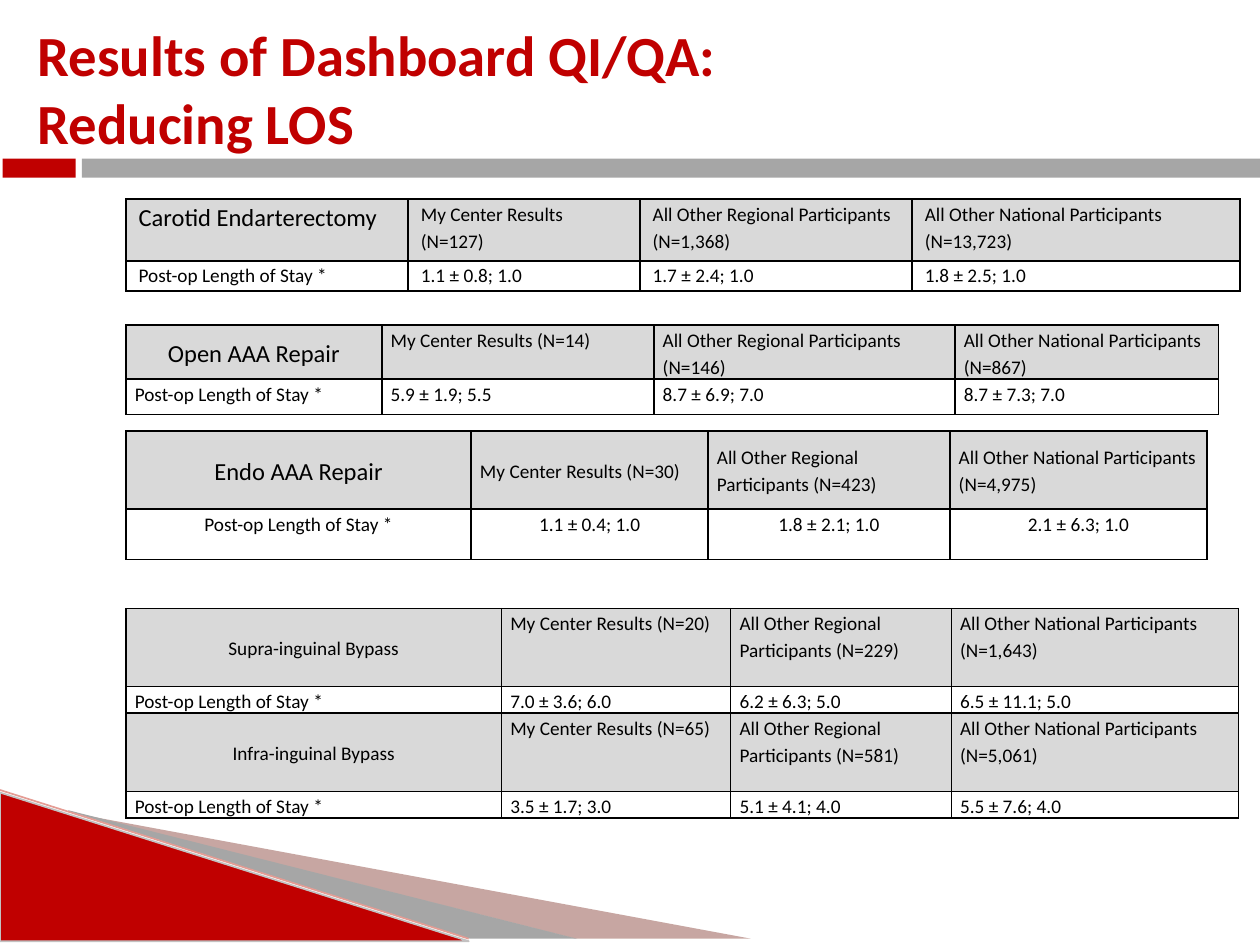
from lxml import etree
from pptx import Presentation
from pptx import util as u
from pptx.dml.color import RGBColor
from pptx.enum import shapes, text
from pptx.oxml import parse_xml
from pptx.oxml.ns import nsdecls, qn

RED = RGBColor(0xC0, 0x00, 0x00)
BROWN = RGBColor(0x74, 0x22, 0x17)
PINK = RGBColor(0xE5, 0x9C, 0x94)
SILVER = RGBColor(0xC3, 0xC1, 0xC1)
GREY = RGBColor(0xA6, 0xA6, 0xA6)
PALE = RGBColor(0xD9, 0xD9, 0xD9)
BLACK = RGBColor(0x00, 0x00, 0x00)
WHITE = RGBColor(0xFF, 0xFF, 0xFF)

COLUMNS, ROWS = 10, 7.5
TOP, MIDDLE, BOTTOM = (text.MSO_ANCHOR.TOP, text.MSO_ANCHOR.MIDDLE,
                       text.MSO_ANCHOR.BOTTOM)
LEFT, CENTER = text.PP_ALIGN.LEFT, text.PP_ALIGN.CENTER
STAY = "Post-op Length of Stay *"


def apply(target, values):
    for name, value in values.items():
        setattr(target, name, value)


class Page:
    """Style and current slide; lengths are columns and rows of the grid."""
    font = "Calibri"

    def __init__(self, deck):
        self.deck = deck
        self.slide = deck.slides.add_slide(deck.slide_layouts[6])

    def x(self, columns):
        return round(self.deck.slide_width * columns / COLUMNS)

    def y(self, rows):
        return round(self.deck.slide_height * rows / ROWS)

    def area(self, left, top, width, height):
        return self.x(left), self.y(top), self.x(width), self.y(height)

    def paint(self, shape, fill, line=None, alpha=None):
        shape.shadow.inherit = False
        shape.fill.solid()
        shape.fill.fore_color.rgb = fill
        if alpha:
            color = shape.fill._xPr.find(qn("a:solidFill"))[0]
            etree.SubElement(color, qn("a:alpha"), val=str(alpha * 1000))
        if line:
            shape.line.color.rgb = line
            shape.line.width = u.Pt(1)
        else:
            shape.line.fill.background()

    def shape(self, kind, place, fill, line=None):
        self.paint(self.slide.shapes.add_shape(kind, *self.area(*place)), fill, line)

    def outline(self, points, fill, alpha=None):
        start, *rest = [(self.x(x), self.y(y)) for x, y in points]
        builder = self.slide.shapes.build_freeform(*start)
        builder.add_line_segments(rest, close=True)
        self.paint(builder.convert_to_shape(), fill, alpha=alpha)

    def line(self, start, end, color, width):
        line = self.slide.shapes.add_connector(
            shapes.MSO_CONNECTOR.STRAIGHT, self.x(start[0]), self.y(start[1]),
            self.x(end[0]), self.y(end[1]))
        line.line.color.rgb = color
        line.line.width = u.Pt(width)
        etree.SubElement(line._element.spPr, qn("a:effectLst"))

    def add_words(self, para, words, size, color=BLACK, bold=False):
        span = para.add_run()
        span.text = words
        apply(span.font, dict(name=self.font, size=u.Pt(size), bold=bold))
        span.font.color.rgb = color

    def title(self, place, words):
        box = self.slide.shapes.add_textbox(*self.area(*place))
        apply(box.text_frame, dict(word_wrap=True, vertical_anchor=MIDDLE,
                                   margin_left=self.x(0.3)))
        self.add_words(box.text_frame.paragraphs[0], words, 32.4, RED, True)

    def cell(self, cell, words, fill, size, anchor, align, inset):
        apply(cell, dict(margin_left=self.x(inset), margin_right=self.x(inset),
                         margin_top=0, margin_bottom=0, vertical_anchor=anchor))
        para = cell.text_frame.paragraphs[0]
        apply(para, dict(alignment=align, line_spacing=1.15))
        self.add_words(para, words, size)
        for side in "LRTB":
            cell._tc.get_or_add_tcPr().append(parse_xml(
                f'<a:ln{side} {nsdecls("a")} w="12700"><a:solidFill>'
                f'<a:srgbClr val="{BLACK}"/></a:solidFill></a:ln{side}>'))
        if fill:
            cell.fill.solid()
            cell.fill.fore_color.rgb = fill
        else:
            cell.fill.background()

    def results(self, top, widths, heights, procedures, size=14, inset=0.07,
                label=(MIDDLE, CENTER), head=TOP, body=LEFT,
                stay_anchors=((TOP, TOP),)):
        """Each procedure takes a shaded heading row and a row of stays."""
        count = len(procedures)
        place = self.area(1, top, sum(widths), sum(heights) * count)
        table = self.slide.shapes.add_table(2 * count, 4, *place).table
        apply(table, dict(first_row=False, horz_banding=False))
        for column, width in zip(table.columns, widths):
            column.width = self.x(width)
        for number, row in enumerate(table.rows):
            row.height = self.y(heights[number % 2])
        for number, (name, sizes, stays) in enumerate(procedures):
            first, other = stay_anchors[number]
            groups = ("My Center Results", "All Other Regional Participants",
                      "All Other National Participants")
            heading = [name] + [f"{g} (N={n})" for g, n in zip(groups, sizes)]
            for column, (words, stay) in enumerate(zip(heading, (STAY,) + stays)):
                is_label = column == 0
                anchor, align = label if is_label else (head, LEFT)
                self.cell(table.cell(2 * number, column), words, PALE,
                          size if is_label else 11, anchor, align, inset)
                self.cell(table.cell(2 * number + 1, column), stay, None, 11,
                          first if is_label else other, body, inset)


def main():
    deck = Presentation()
    deck.slide_width, deck.slide_height = u.Inches(COLUMNS), u.Inches(ROWS)
    page = Page(deck)

    # Corner wedges
    page.outline([(0.56, 6.45), (5.96, 7.45), (4.57, 7.45), (0.56, 6.44)], BROWN, 40)
    page.outline([(0.54, 6.43), (4.58, 7.45), (3.73, 7.45), (0.55, 6.44)], GREY)
    page.shape(shapes.MSO_SHAPE.RIGHT_TRIANGLE, (0, 6.29, 3.72, 1.18), RED, SILVER)
    page.line((0, 6.27), (3.72, 7.45), PINK, 0.95)

    # Title and the band below it
    for place, fill in (((0, 1.25, 10, 0.17), WHITE),
                        ((0.02, 1.26, 0.58, 0.15), RED),
                        ((0.65, 1.26, 9.35, 0.15), GREY)):
        page.shape(shapes.MSO_SHAPE.RECTANGLE, place, fill)
    page.title((0, 0.25, 6.97, 0.89), "Results of Dashboard QI/QA: Reducing LOS")

    # Result tables
    page.results(1.58, (2.24, 1.84, 2.16, 2.6), (0.49, 0.24), [
        ("Carotid Endarterectomy", ("127", "1,368", "13,723"),
         ("1.1 ± 0.8; 1.0", "1.7 ± 2.4; 1.0", "1.8 ± 2.5; 1.0"))],
        inset=0.1, label=(TOP, LEFT))
    page.results(2.58, (2.03, 2.16, 2.39, 2.09), (0.43, 0.28), [
        ("Open AAA Repair", ("14", "146", "867"),
         ("5.9 ± 1.9; 5.5", "8.7 ± 6.9; 7.0", "8.7 ± 7.3; 7.0"))])
    page.results(3.42, (2.74, 1.88, 1.92, 2.04), (0.62, 0.4), [
        ("Endo AAA Repair", ("30", "423", "4,975"),
         ("1.1 ± 0.4; 1.0", "1.8 ± 2.1; 1.0", "2.1 ± 6.3; 1.0"))],
        head=MIDDLE, body=CENTER)
    page.results(4.83, (2.98, 1.82, 1.75, 2.28), (0.62, 0.21), [
        ("Supra-inguinal Bypass", ("20", "229", "1,643"),
         ("7.0 ± 3.6; 6.0", "6.2 ± 6.3; 5.0", "6.5 ± 11.1; 5.0")),
        ("Infra-inguinal Bypass", ("65", "581", "5,061"),
         ("3.5 ± 1.7; 3.0", "5.1 ± 4.1; 4.0", "5.5 ± 7.6; 4.0"))],
        size=11, stay_anchors=((BOTTOM, TOP), (BOTTOM, BOTTOM)))

    deck.save("out.pptx")


if __name__ == "__main__":
    main()
